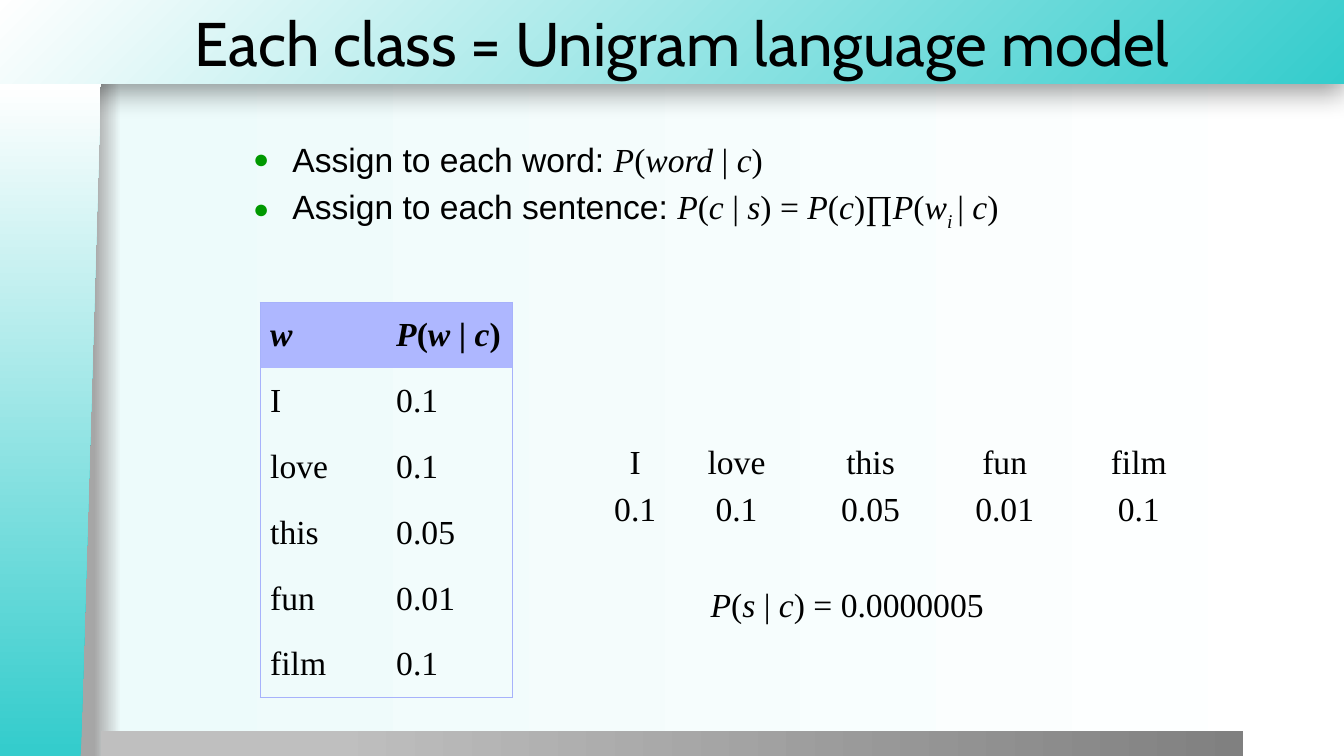
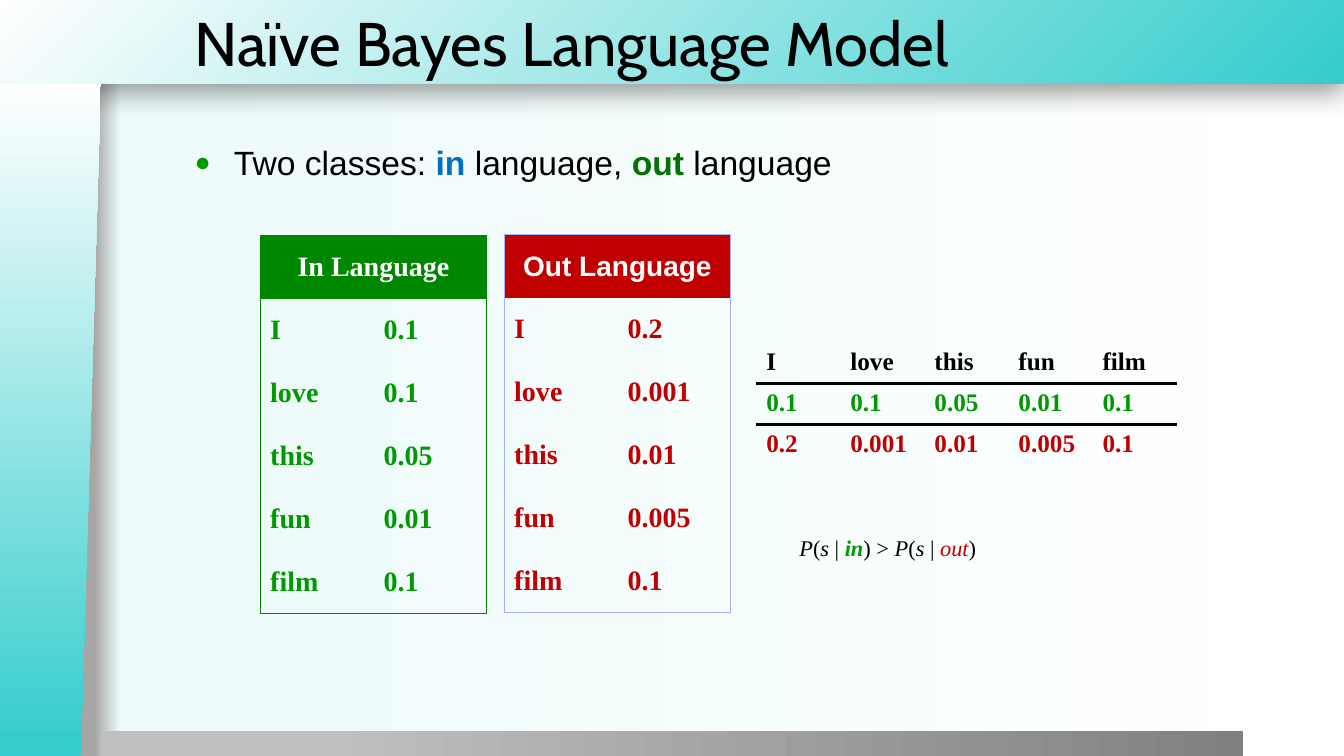
from dataclasses import dataclass

from lxml import etree
from pptx import Presentation
from pptx.dml.color import RGBColor
from pptx.enum.shapes import MSO_SHAPE
from pptx.enum.text import MSO_ANCHOR, MSO_AUTO_SIZE, PP_ALIGN
from pptx.oxml import parse_xml
from pptx.oxml.ns import qn
from pptx.util import Inches, Pt

NS = 'xmlns:a="http://schemas.openxmlformats.org/drawingml/2006/main"'
NO_STYLE = "{2D5ABB26-0587-4C30-8999-92F81FD0307C}"
W, H = 13.33, 7.5


@dataclass(frozen=True)
class Theme:
    black: str = "000000"
    white: str = "FFFFFF"
    teal: str = "34CCCC"
    green: str = "009900"
    dark_green: str = "007300"
    head_green: str = "008700"
    red: str = "C00000"
    blue: str = "0070C0"
    lilac: str = "AEB7FF"
    lilac_line: str = "A7B2FB"
    title_font: str = "Cabin"
    body_font: str = "Arial"
    math_font: str = "Times New Roman"
    title: int = 44
    body: int = 24
    table: int = 20
    strip: int = 18
    note: int = 16


T = Theme()


def formula(text, **style):
    """Runs in the formula font; the parts between asterisks are italic."""
    return [(part, dict(font=T.math_font, italic=i % 2 == 1, **style))
            for i, part in enumerate(text.split("*")) if part]


# Content
WORDS = ["I", "love", "this", "fun", "film"]
IN_P = ["0.1", "0.1", "0.05", "0.01", "0.1"]
OUT_P = ["0.2", "0.001", "0.01", "0.005", "0.1"]

UNIGRAM = dict(
    title="Each class = Unigram language model",
    body_at=(2.41, 1.33, 9.01, 5.79),
    bullets=[
        [("Assign to each word: ", {})] + formula("*P*(*word* | *c*)"),
        [("Assign to each sentence: ", {})]
        + formula("*P*(*c *| *s*) = *P*(*c*)∏*P*(*w*")
        + formula("*i *", base=-25000) + formula("| *c*)"),
    ],
    tables=[
        dict(at=(2.58, 3, 2.5, 3.92), size=T.body, box=T.lilac_line,
             rows=[[formula("*w*"), formula("*P*(*w* | *c*)")], *zip(WORDS, IN_P)],
             head=dict(fill=T.lilac, bold=True)),
        dict(at=(5.96, 4.36, 6, 0.82), size=T.body, cols=[0.68] + [1.33] * 4,
             rows=[WORDS, IN_P], align=PP_ALIGN.CENTER, pad=0.05,
             anchor=MSO_ANCHOR.TOP),
    ],
    note=dict(at=(6.95, 5.74, 3.58, 0.5), size=T.body,
              runs=formula("*P*(*s* | *c*) = 0.0000005")),
)

BAYES = dict(
    title="Naïve Bayes Language Model",
    body_at=(1.83, 1.36, 10.5, 5.79),
    bullets=[[("Two classes: ", {}), ("in", dict(color=T.blue, bold=True)),
              (" language, ", {}), ("out", dict(color=T.dark_green, bold=True)),
              (" language", {})]],
    tables=[
        dict(at=(2.58, 2.34, 2.25, 3.75), size=T.table, box=T.head_green,
             rows=[["In Language"], *zip(WORDS, IN_P)], bold=True,
             colors=[T.white] + [T.green] * 5, head=dict(fill=T.head_green)),
        dict(at=(5, 2.33, 2.25, 3.75), size=T.table, box=T.lilac_line,
             rows=[["Out Language"], *zip(WORDS, OUT_P)], bold=True,
             colors=[T.white] + [T.red] * 5,
             head=dict(fill=T.red, font=T.body_font)),
        dict(at=(7.5, 3.4, 4.17, 1.22), size=T.strip, rule=T.black,
             rows=[WORDS, IN_P, OUT_P], bold=True, pad=0.05,
             colors=[T.black, T.green, T.red], anchor=MSO_ANCHOR.TOP),
    ],
    note=dict(at=(7.83, 5.25, 3.58, 0.51), size=T.note,
              runs=formula("*P*(*s* | ") + formula("*in*", color=T.green, bold=True)
              + formula(") > *P*(*s* | ") + formula("*out*", color=T.red)
              + formula(")")),
)


# Text
def add_runs(p, runs, **base):
    for text, style in runs:
        st = {"font": T.body_font, "color": T.black, **base, **style}
        r = p.add_run()
        r.text = text
        f = r.font
        f.name, f.size = st["font"], Pt(st["size"])
        f.bold, f.italic = st.get("bold", False), st.get("italic", False)
        f.color.rgb = RGBColor.from_string(st["color"])
        if "base" in st:
            r._r.get_or_add_rPr().set("baseline", str(st["base"]))


def place(shape, at):
    shape.left, shape.top, shape.width, shape.height = map(Inches, at)


def add_bullet(p):
    pPr = p._p.get_or_add_pPr()
    pPr.set("marL", str(Inches(0.39)))
    pPr.set("indent", str(-Inches(0.39)))
    for xml in (f'<a:buClr {NS}><a:srgbClr val="{T.green}"/></a:buClr>',
                f'<a:buSzPct {NS} val="80000"/>',
                f'<a:buFont {NS} typeface="{T.body_font}"/>',
                f'<a:buChar {NS} char="●"/>'):
        pPr.append(parse_xml(xml))


# Shared frame
def set_gradient(fill, owner, stops, corner=False):
    """Horizontal gradient, or one spreading from the bottom right corner."""
    fill.gradient()
    old = next(owner.iter(qn("a:gradFill")))
    gs = "".join(f'<a:gs pos="{pos * 1000}"><a:srgbClr val="{c}"/></a:gs>'
                 for pos, c in stops)
    way = ('<a:path path="circle"><a:fillToRect l="100000" t="100000"/></a:path>'
           if corner else '<a:lin ang="0" scaled="0"/>')
    old.getparent().replace(old, parse_xml(
        f'<a:gradFill {NS} rotWithShape="1"><a:gsLst>{gs}</a:gsLst>{way}</a:gradFill>'))


def build_frame(layout, s):
    """Put the background and the three bands on the layout, by way of slide s."""
    set_gradient(layout.background.fill, layout._element,
                 [(7, "A6A6A6"), (9, "EDFBFB"), (100, T.white)])
    bands = [
        (MSO_SHAPE.RECTANGLE, (-0.01, 0, 13.34, 0.83),
         [(0, T.teal), (100, T.white)], True),
        (MSO_SHAPE.RECTANGLE, (1, 7.25, 11.33, 0.26),
         [(20, "BFBFBF"), (100, "808080")], False),
        (MSO_SHAPE.FLOWCHART_MANUAL_INPUT, (-2.84, 3.67, 6.68, 1),
         [(1, T.teal), (100, T.white)], False),
    ]
    shapes = []
    for kind, at, stops, corner in bands:
        sp = s.shapes.add_shape(kind, *map(Inches, at))
        sp.shadow.inherit = False
        sp.line.fill.background()
        set_gradient(sp.fill, sp._element, stops, corner)
        shapes.append(sp)
    header, _, side = shapes
    side.rotation = 270
    side._element.spPr.find(qn("a:xfrm")).set("flipV", "1")
    header._element.spPr.find(qn("a:effectLst")).append(parse_xml(
        f'<a:outerShdw {NS} blurRad="{Pt(20)}" dist="{Pt(6)}" dir="5400000" '
        f'algn="t" rotWithShape="0"><a:srgbClr val="{T.black}">'
        '<a:alpha val="40000"/></a:srgbClr></a:outerShdw>'))
    for i, sp in enumerate(shapes):
        layout.shapes._spTree.insert(2 + i, sp._element)
    place(layout.placeholders[0], (1.83, 0, 11.51, 0.83))


# Tables
def set_borders(cell, lines):
    """lines maps a side (L, R, T, B) to a colour and a width, or to None."""
    tcPr = cell._tc.get_or_add_tcPr()
    for i, side in enumerate("LRTB"):
        line = lines.get(side)
        ln = etree.Element(qn(f"a:ln{side}"))
        if line:
            ln.set("w", str(Pt(line[1])))
            solid = etree.SubElement(ln, qn("a:solidFill"))
            etree.SubElement(solid, qn("a:srgbClr"), val=line[0])
        else:
            etree.SubElement(ln, qn("a:noFill"))
        tcPr.insert(i, ln)


def draw_table(s, at, rows, size, cols=None, box=None, rule=None, colors=None,
               head=None, bold=False, align=PP_ALIGN.LEFT, pad=0.04,
               anchor=MSO_ANCHOR.MIDDLE):
    n, m = len(rows), len(rows[-1])
    frame = s.shapes.add_table(n, m, *map(Inches, at))
    tbl = frame.table
    tbl.first_row = tbl.horz_banding = False
    frame._element.find(".//" + qn("a:tableStyleId")).text = NO_STYLE
    for col, width in zip(tbl.columns, cols or [at[2] / m] * m):
        col.width = Inches(width)
    for i, row in enumerate(rows):
        tbl.rows[i].height = Inches(at[3] / n)
        style = dict(font=T.math_font, size=size, bold=bold,
                     color=colors[i] if colors else T.black)
        if i == 0 and head:
            style.update(head)
        fill = style.pop("fill", None)
        merged = len(row) < m
        if merged:
            tbl.cell(i, 0).merge(tbl.cell(i, m - 1))
        for j in range(m):
            cell = tbl.cell(i, j)
            if fill:
                cell.fill.solid()
                cell.fill.fore_color.rgb = RGBColor.from_string(fill)
            else:
                cell.fill.background()
            edges = dict(L=j == 0, R=merged or j == m - 1, T=i == 0, B=i == n - 1)
            lines = {k: (box, 0.75) for k, on in edges.items() if box and on}
            if rule:
                lines.update({k: (rule, 2.25) for k in "TB" if not edges[k]})
            set_borders(cell, lines)
            cell.vertical_anchor = anchor
            cell.margin_left = cell.margin_right = Inches(0.1)
            cell.margin_top = cell.margin_bottom = Inches(pad)
            if j < len(row):
                p = cell.text_frame.paragraphs[0]
                p.alignment = PP_ALIGN.CENTER if merged else align
                content = row[j]
                runs = [(content, {})] if isinstance(content, str) else content
                add_runs(p, runs, **style)


def fill_slide(s, title, body_at, bullets, tables, note):
    tf = s.shapes.title.text_frame
    tf.auto_size, tf.vertical_anchor = MSO_AUTO_SIZE.NONE, MSO_ANCHOR.MIDDLE
    tf.paragraphs[0].alignment = PP_ALIGN.LEFT
    add_runs(tf.paragraphs[0], [(title, {})], font=T.title_font, size=T.title)

    body = s.placeholders[1]
    place(body, body_at)
    tf = body.text_frame
    tf.auto_size = MSO_AUTO_SIZE.NONE
    for i, runs in enumerate(bullets):
        p = tf.add_paragraph() if i else tf.paragraphs[0]
        add_bullet(p)
        add_runs(p, runs, size=T.body)

    for table in tables:
        draw_table(s, **table)

    tf = s.shapes.add_textbox(*map(Inches, note["at"])).text_frame
    tf.word_wrap = True
    add_runs(tf.paragraphs[0], note["runs"], size=note["size"])


def main():
    prs = Presentation()
    prs.slide_width, prs.slide_height = Inches(W), Inches(H)
    layout = prs.slide_layouts[1]
    slides = [prs.slides.add_slide(layout) for _ in range(2)]
    build_frame(layout, slides[0])
    for s, content in zip(slides, (UNIGRAM, BAYES)):
        fill_slide(s, **content)
    prs.save("out.pptx")


if __name__ == "__main__":
    main()
